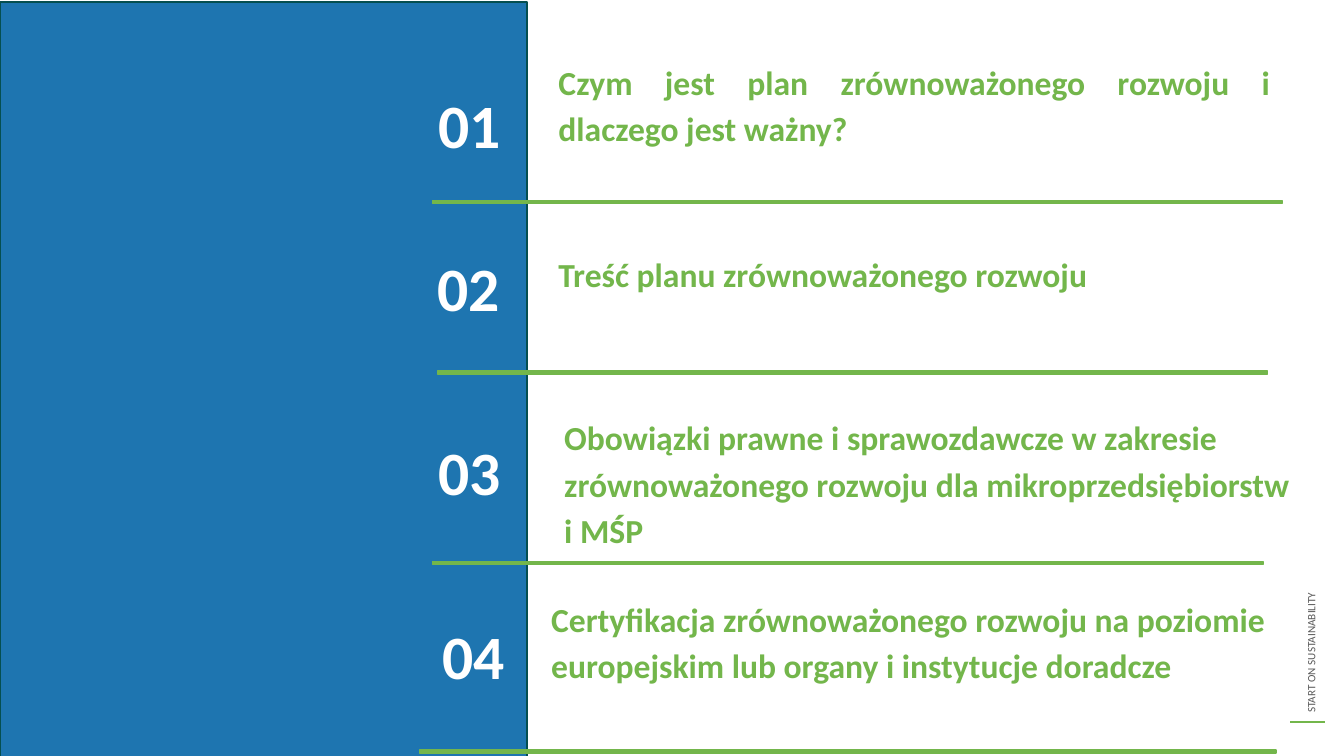
from pptx import Presentation
from pptx.dml.color import RGBColor
from pptx.enum.shapes import MSO_CONNECTOR, MSO_SHAPE
from pptx.enum.text import MSO_ANCHOR, MSO_AUTO_SIZE, PP_ALIGN
from pptx.oxml.ns import qn
from pptx.util import Cm, Pt
from lxml import etree

COLORS = {"blue": "1E75B0", "edge": "054F50", "green": "73B64B",
          "white": "FFFFFF", "gray": "595959"}
HEADING = {"size": Pt(24), "bold": True, "name": "Calibri"}
NUMBER = {"size": Pt(44), "bold": True, "name": "Calibri"}
MOTTO = {"size": Pt(8), "bold": False, "name": "Calibri"}


def write(box, place, text, font_format, color, spacing, align=PP_ALIGN.LEFT):
    box.left, box.top, box.width, box.height = [Cm(value) for value in place]
    frame = box.text_frame
    frame_format = {"word_wrap": True, "auto_size": MSO_AUTO_SIZE.NONE,
                    "vertical_anchor": MSO_ANCHOR.TOP}
    for name, value in frame_format.items():
        setattr(frame, name, value)
    para = frame.paragraphs[0]
    if box.is_placeholder:
        properties = para._p.get_or_add_pPr()
        properties.set("marL", "0")
        properties.set("indent", "0")
        etree.SubElement(properties, qn("a:buNone"))
    para_format = {"alignment": align, "line_spacing": spacing, "space_before": Pt(0)}
    for name, value in para_format.items():
        setattr(para, name, value)
    span = para.add_run()
    span.text = text
    for name, value in font_format.items():
        setattr(span.font, name, value)
    span.font.color.rgb = RGBColor.from_string(COLORS[color])


def add_bar(page, place, fill, line):
    bar = page.shapes.add_shape(MSO_SHAPE.RECTANGLE, *[Cm(value) for value in place])
    bar.shadow.inherit = False
    bar.fill.solid()
    bar.fill.fore_color.rgb = RGBColor.from_string(COLORS[fill])
    bar.line.color.rgb = RGBColor.from_string(COLORS[line])
    bar.line.width = Pt(1)
    return bar


deck = Presentation()
deck.slide_width, deck.slide_height = Cm(33.87), Cm(19.05)
page = deck.slides.add_slide(deck.slide_layouts[3])
title = page.shapes.title
title._element.getparent().remove(title._element)

sidebar = add_bar(page, (0, 0.05, 13.28, 19.05), "blue", "edge")
page.shapes._spTree.insert(2, sidebar._element)

motto = page.shapes.add_textbox(0, 0, 0, 0)
write(motto, (27.38, 12.24, 11.33, 0.61), "START ON SUSTAINABILITY", MOTTO, "gray", 1.0)
motto.rotation = 270

motto_line = page.shapes.add_connector(
    MSO_CONNECTOR.STRAIGHT, Cm(32.51), Cm(18.19), Cm(33.4), Cm(18.19))
motto_line.line.color.rgb = RGBColor.from_string(COLORS["green"])
motto_line.line.width = Pt(1)
etree.SubElement(motto_line._element.spPr, qn("a:effectLst"))

topics = [
    ("Czym jest plan zrównoważonego rozwoju i dlaczego jest ważny?",
     (13.82, 1.27, 18.44, 3.1), 1.15, PP_ALIGN.JUSTIFY,
     (10.8, 1.5, 3.45, 3.56), (10.9, 5.05, 21.41)),
    ("Treść planu zrównoważonego rozwoju",
     (13.82, 6.27, 18.82, 1.52), 1.0, PP_ALIGN.LEFT,
     (10.77, 5.61, 3.07, 2.72), (11.02, 9.35, 20.93)),
    ("Obowiązki prawne i sprawozdawcze w zakresie zrównoważonego rozwoju "
     "dla mikroprzedsiębiorstw i MŚP",
     (13.97, 10.24, 18.92, 3.35), 1.15, PP_ALIGN.LEFT,
     (10.8, 10.26, 2.13, 2.03), (10.9, 14.15, 20.93)),
    ("Certyfikacja zrównoważonego rozwoju na poziomie europejskim "
     "lub organy i instytucje doradcze",
     (13.64, 14.81, 19.61, 2.77), 1.15, PP_ALIGN.LEFT,
     (10.9, 14.88, 2.34, 2.03), (10.57, 18.9, 21.59)),
]

for index, (text, text_place, spacing, align, number_place, rule) in enumerate(topics, 1):
    if index == 1:
        heading, number = page.placeholders[1], page.placeholders[2]
    else:
        heading, number = [page.shapes.add_textbox(0, 0, 0, 0) for _ in range(2)]
    write(heading, text_place, text, HEADING, "green", spacing, align)
    write(number, number_place, f"{index:02d}", NUMBER, "white", 1.3)
    add_bar(page, (*rule, 0.08), "green", "green")

deck.save("out.pptx")
